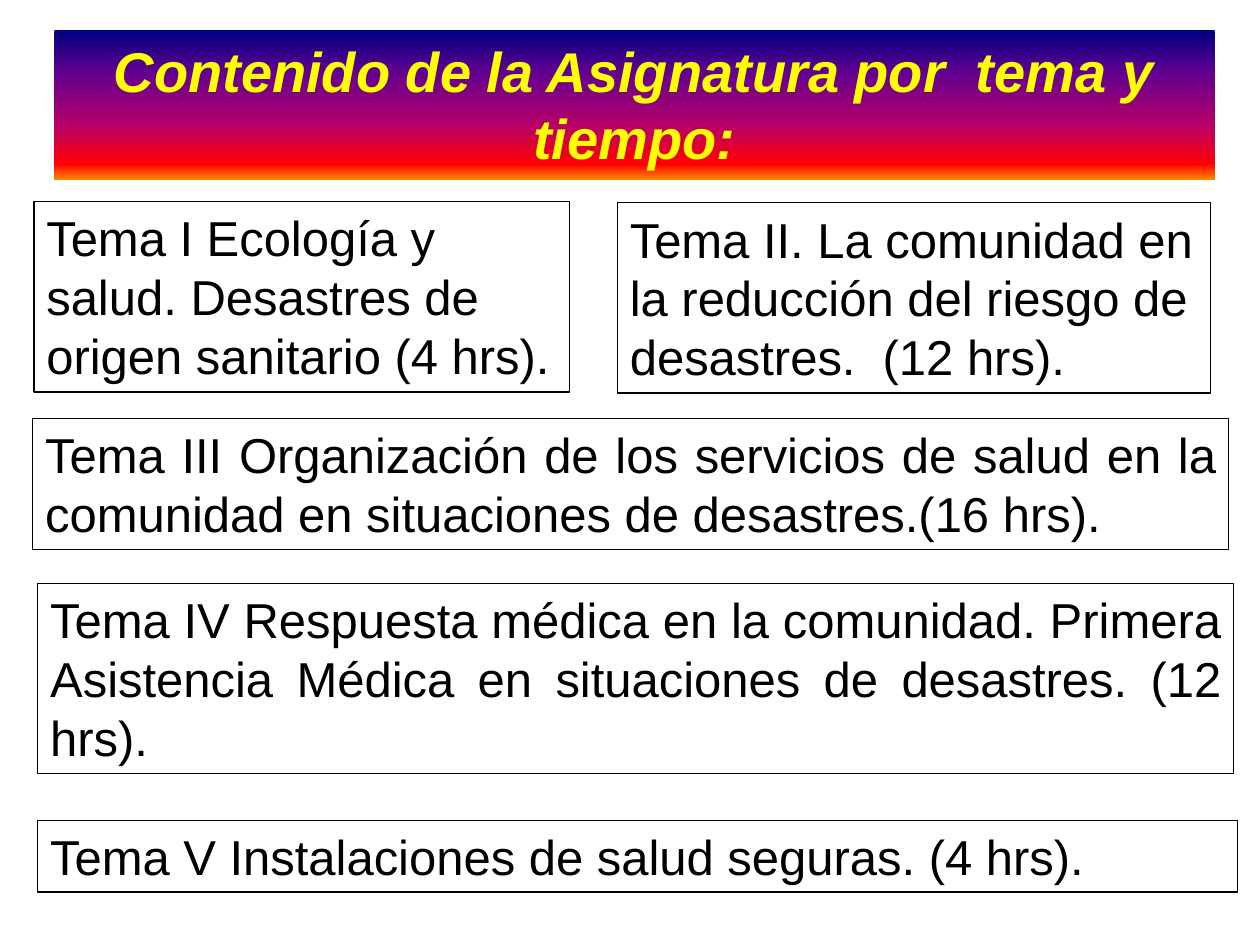
from lxml import etree
from pptx import Presentation
from pptx.dml.color import RGBColor
from pptx.enum import text as t
from pptx.oxml import ns
from pptx.util import Pt

LEFT, MID, JUST = t.PP_ALIGN.LEFT, t.PP_ALIGN.CENTER, t.PP_ALIGN.JUSTIFY
TITLE = "Contenido de la Asignatura por  tema y tiempo:"
STOPS = [(0, "000082"), (30, "66008F"), (65, "BA0066"), (90, "FF0000"), (100, "FF8200")]
TOPICS = [
    ("Tema I Ecología y salud. Desastres de origen sanitario (4 hrs).",
     (19.4, 115.2, 306, 108.7), LEFT, 1),
    ("Tema II. La comunidad en la reducción del riesgo de desastres.  (12 hrs).",
     (352.8, 115.9, 339.1, 108.7), LEFT, 0.75),
    ("Tema III Organización de los servicios de salud en la comunidad "
     "en situaciones de desastres.(16 hrs).",
     (18.7, 239, 683.3, 74.9), JUST, 0.75),
    ("Tema IV Respuesta médica en la comunidad. Primera Asistencia Médica "
     "en situaciones de desastres. (12 hrs). ",
     (21.6, 333.4, 683.3, 108.7), JUST, 0.75),
    ("Tema V Instalaciones de salud seguras. (4 hrs).",
     (21.6, 468.7, 685.4, 41), LEFT, 0.75),
]


def color(code):
    return RGBColor.from_string(code)


def place(shape, box):
    shape.left, shape.top, shape.width, shape.height = map(Pt, box)


def write(shape, words, size, ink, align, bold=False):
    frame = shape.text_frame
    frame.text = words
    frame.word_wrap = True
    frame.auto_size = t.MSO_AUTO_SIZE.SHAPE_TO_FIT_TEXT
    frame.vertical_anchor = t.MSO_ANCHOR.TOP
    para = frame.paragraphs[0]
    para.alignment = align
    font = para.runs[0].font
    font.name, font.size = "Arial", Pt(size)
    font.bold = font.italic = bold
    font.color.rgb = color(ink)


def blend(fill, stops):
    fill.gradient()
    fill.gradient_angle = 270
    grad = fill.gradient_stops[0]._gs.getparent()
    for old in list(grad):
        grad.remove(old)
    for spot, code in stops:
        stop = etree.SubElement(grad, ns.qn("a:gs"), pos=str(spot * 1000))
        etree.SubElement(stop, ns.qn("a:srgbClr"), val=code)


deck = Presentation()
deck.slide_width, deck.slide_height = Pt(720), Pt(540)
slide = deck.slides.add_slide(deck.slide_layouts[5])

title = slide.shapes.title
place(title, (31, 17.3, 663.1, 85))
write(title, TITLE, 32, "FFFF00", MID, True)
blend(title.fill, STOPS)

for words, box, align, width in TOPICS:
    topic = slide.shapes.add_textbox(*map(Pt, box))
    write(topic, words, 28, "000000", align)
    topic.line.color.rgb = color("000000")
    topic.line.width = Pt(width)

deck.save("out.pptx")
